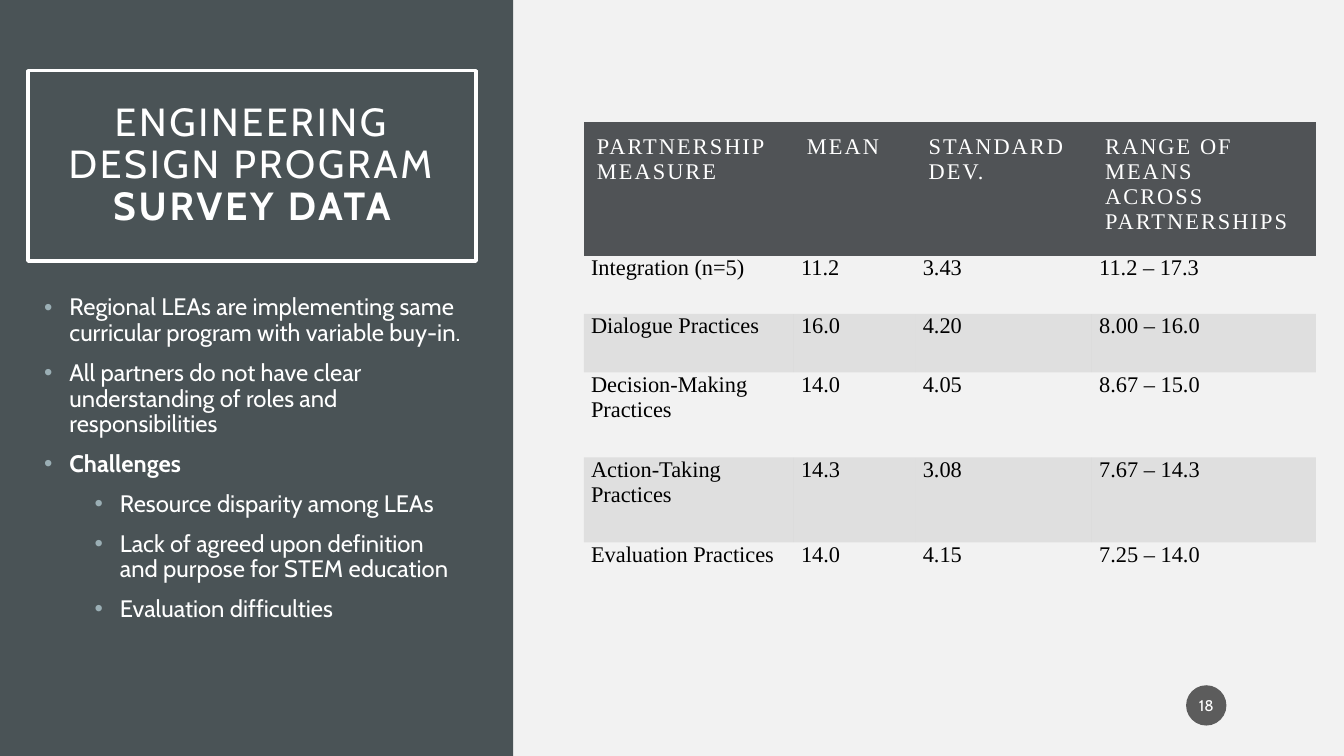
from lxml import etree
from pptx import Presentation
from pptx.dml.color import RGBColor
from pptx.enum.shapes import MSO_SHAPE
from pptx.enum.text import MSO_ANCHOR, MSO_AUTO_SIZE, PP_ALIGN
from pptx.oxml.ns import qn
from pptx.util import Pt

RECT, OVAL = MSO_SHAPE.RECTANGLE, MSO_SHAPE.OVAL
MIDDLE, TOP = MSO_ANCHOR.MIDDLE, MSO_ANCHOR.TOP
LEFT, CENTER = PP_ALIGN.LEFT, PP_ALIGN.CENTER
FIXED = MSO_AUTO_SIZE.NONE

WHITE = RGBColor(0xFF, 0xFF, 0xFF)
BLACK = RGBColor(0, 0, 0)
PAPER = RGBColor(0xF2, 0xF2, 0xF2)
SLATE = RGBColor(0x4A, 0x53, 0x56)
HEAD = RGBColor(0x50, 0x53, 0x56)
MIST = RGBColor(0x9B, 0xAF, 0xB5)
COAL = RGBColor(0x1D, 0x1D, 0x1D)

SANS, SERIF = "Cabin", "Times New Roman"
NO_GRID = "{2D5ABB26-0587-4C30-8999-92F81FD0307C}"

POINTS = [
    (0, "Regional LEAs are implementing same curricular program with variable buy-in."),
    (0, "All partners do not have clear understanding of roles and responsibilities"),
    (0, "Challenges"),
    (1, "Resource disparity among LEAs"),
    (1, "Lack of agreed upon definition and purpose for STEM education"),
    (1, "Evaluation difficulties"),
]
COLS = [150, 87, 126, 160]
ROWS = [88, 41.75, 41.75, 60.75, 60.75, 60.75]
DATA = [
    ["PARTNERSHIP MEASURE", "MEAN", "STANDARD DEV.", "RANGE OF MEANS\nACROSS PARTNERSHIPS"],
    ["Integration (n=5)", "11.2", "3.43", "11.2 – 17.3"],
    ["Dialogue Practices", "16.0", "4.20", "8.00 – 16.0"],
    ["Decision-Making Practices", "14.0", "4.05", "8.67 – 15.0"],
    ["Action-Taking Practices", "14.3", "3.08", "7.67 – 14.3"],
    ["Evaluation Practices", "14.0", "4.15", "7.25 – 14.0"],
]


def assign(obj, vals):
    for name, val in vals.items():
        setattr(obj, name, val)


def inset(x, y):
    return {"margin_left": Pt(x), "margin_right": Pt(x),
            "margin_top": Pt(y), "margin_bottom": Pt(y)}


class Deck:
    """Holds the text style and the current slide."""

    def __init__(self, slide):
        self.slide = slide
        self.shapes = slide.shapes
        self.font = {"name": SANS, "size": Pt(17), "bold": False}
        self.color = WHITE

    def run(self, para, text, track=0, **font):
        run = para.add_run()
        run.text = text
        assign(run.font, {**self.font, **font})
        run.font.color.rgb = self.color
        if track:
            run.font._element.set("spc", str(int(track * 100)))

    def paint(self, fill, color, alpha=100):
        fill.solid()
        fill.fore_color.rgb = color
        if alpha < 100:
            tint = fill._xPr.find(".//" + qn("a:srgbClr"))
            etree.SubElement(tint, qn("a:alpha"), val=str(alpha * 1000))

    def shape(self, kind, box, color, alpha=100):
        shape = self.shapes.add_shape(kind, *map(Pt, box))
        shape.shadow.inherit = False
        shape.line.fill.background()
        self.paint(shape.fill, color, alpha)
        return shape

    def title(self, box, parts):
        title = self.shapes.title
        assign(title, dict(zip(("left", "top", "width", "height"), map(Pt, box))))
        title.line.color.rgb = WHITE
        title.line.width = Pt(2.5)
        frame = title.text_frame
        assign(frame, {"word_wrap": True, "auto_size": FIXED,
                       "vertical_anchor": MIDDLE, **inset(14.4, 14.4)})
        para = frame.paragraphs[0]
        assign(para, {"alignment": CENTER, "line_spacing": 0.9})
        for text, bold in parts:
            self.run(para, text, 2, size=Pt(28), bold=bold)
        self.shapes._spTree.append(title._element)  # in front of the panel

    def bullets(self, box, items):
        frame = self.shapes.add_textbox(*map(Pt, box)).text_frame
        frame.word_wrap = True
        for i, (level, text) in enumerate(items):
            para = frame.add_paragraph() if i else frame.paragraphs[0]
            assign(para, {"level": level, "alignment": LEFT,
                          "line_spacing": 0.9, "space_before": Pt(10)})
            props = para._p.get_or_add_pPr()
            props.set("marL", str(Pt(22.5 + 36 * level)))
            props.set("indent", str(Pt(-18)))
            tint = etree.SubElement(props, qn("a:buClr"))
            etree.SubElement(tint, qn("a:srgbClr"), val=str(MIST))
            etree.SubElement(props, qn("a:buFont"), typeface="Arial")
            etree.SubElement(props, qn("a:buChar"), char="•")
            self.run(para, text, bold=text == "Challenges")

    def cell(self, cell, text, row):
        head = row == 0
        assign(cell, {"vertical_anchor": TOP,
                      **(inset(9.4, 9.4) if head else inset(5.2, 0))})
        if head:
            self.paint(cell.fill, HEAD)
        elif row % 2 == 0:
            self.paint(cell.fill, BLACK, 8)
        else:
            cell.fill.background()
        self.color = WHITE if head else BLACK
        frame = cell.text_frame
        for i, line in enumerate(text.split("\n")):
            para = frame.add_paragraph() if i else frame.paragraphs[0]
            self.run(para, line, 1.5 if head else 0, name=SERIF, size=Pt(16))
        self.color = WHITE

    def table(self, left, top, cols, rows, data):
        size = map(Pt, (left, top, sum(cols), sum(rows)))
        table = self.shapes.add_table(len(rows), len(cols), *size).table
        table._tbl.tblPr.find(qn("a:tableStyleId")).text = NO_GRID
        for col, width in zip(table.columns, cols):
            col.width = Pt(width)
        for r, (row, height) in enumerate(zip(table.rows, rows)):
            row.height = Pt(height)
            for cell, text in zip(row.cells, data[r]):
                self.cell(cell, text, r)

    def badge(self, box, text):
        frame = self.shape(OVAL, box, COAL, 70).text_frame
        assign(frame, {"vertical_anchor": MIDDLE, "word_wrap": True, **inset(1.4, 3.6)})
        para = frame.paragraphs[0]
        para.alignment = CENTER
        self.run(para, text, size=Pt(11))


def main():
    prs = Presentation()
    assign(prs, {"slide_width": Pt(960), "slide_height": Pt(540)})
    deck = Deck(prs.slides.add_slide(prs.slide_layouts[5]))
    deck.paint(deck.slide.background.fill, PAPER)
    deck.shape(RECT, (0, 0, 366.5, 540), SLATE)
    deck.title((20, 50.5, 320, 136),
               [("ENGINEERING DESIGN PROGRAM ", False), ("SURVEY DATA", True)])
    deck.bullets((20, 207.5, 320, 269), POINTS)
    deck.table(417, 87, COLS, ROWS, DATA)
    deck.badge((847.25, 489.5, 28.8, 28.8), "18")
    prs.save("out.pptx")


if __name__ == "__main__":
    main()
